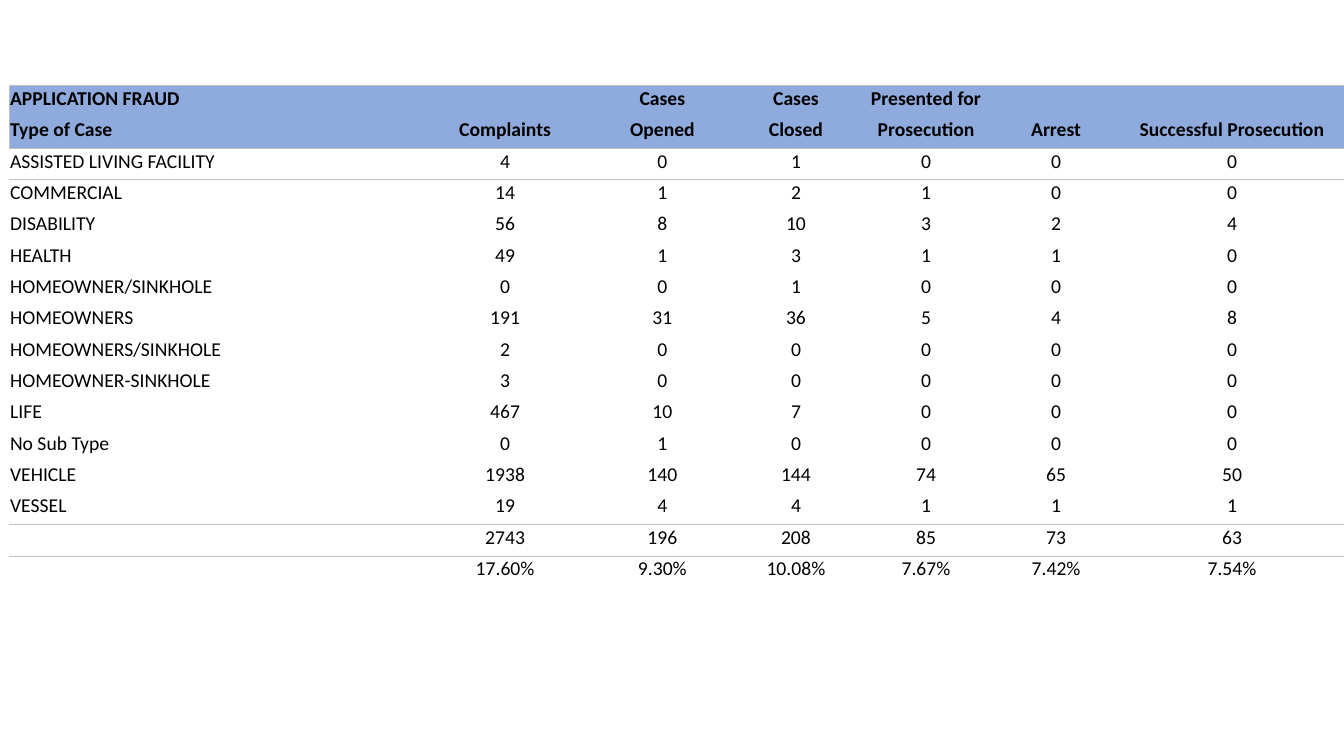
from lxml.etree import SubElement
from pptx import Presentation
from pptx.dml.color import RGBColor
from pptx.enum.text import MSO_ANCHOR as Anchor, PP_ALIGN as Align
from pptx.oxml.ns import qn
from pptx.util import Inches, Pt

HEADINGS = [
    ("APPLICATION FRAUD", "", "Cases", "Cases", "Presented for", "", ""),
    ("Type of Case", "Complaints", "Opened", "Closed", "Prosecution", "Arrest",
     "Successful Prosecution"),
]
CASES = [
    ("ASSISTED LIVING FACILITY", 4, 0, 1, 0, 0, 0),
    ("COMMERCIAL", 14, 1, 2, 1, 0, 0),
    ("DISABILITY", 56, 8, 10, 3, 2, 4),
    ("HEALTH", 49, 1, 3, 1, 1, 0),
    ("HOMEOWNER/SINKHOLE", 0, 0, 1, 0, 0, 0),
    ("HOMEOWNERS", 191, 31, 36, 5, 4, 8),
    ("HOMEOWNERS/SINKHOLE", 2, 0, 0, 0, 0, 0),
    ("HOMEOWNER-SINKHOLE", 3, 0, 0, 0, 0, 0),
    ("LIFE", 467, 10, 7, 0, 0, 0),
    ("No Sub Type", 0, 1, 0, 0, 0, 0),
    ("VEHICLE", 1938, 140, 144, 74, 65, 50),
    ("VESSEL", 19, 4, 4, 1, 1, 1),
]
TOTALS = [
    ("", 2743, 196, 208, 85, 73, 63),
    ("", "17.60%", "9.30%", "10.08%", "7.67%", "7.42%", "7.54%"),
]
ROWS = HEADINGS + CASES + TOTALS
WIDTHS = [4.06, 1.72, 1.4, 1.25, 1.33, 1.25, 2.24]
LEFT, TOP, HEIGHT = 0.09, 0.85, 4.98

BLACK = RGBColor(0, 0, 0)
BLUE = RGBColor(0x8F, 0xAA, 0xDC)
GRAY = RGBColor(0xC0, 0xC0, 0xC0)
FONT = "Calibri"
SIZE = 14
NO_STYLE = "{2D5ABB26-0587-4C30-8999-92F81FD0307C}"


def write(cell, text, bold=False, align=Align.LEFT):
    cell.margin_left = cell.margin_right = cell.margin_top = Inches(0.01)
    cell.margin_bottom = 0
    cell.vertical_anchor = Anchor.TOP
    para = cell.text_frame.paragraphs[0]
    para.alignment = align
    if not text:
        SubElement(para._p, qn("a:endParaRPr"), sz=str(SIZE * 100))
        return
    span = para.add_run()
    span.text = text
    span.font.name = FONT
    span.font.size = Pt(SIZE)
    span.font.bold = bold
    span.font.color.rgb = BLACK


def add_borders(cell, sides):
    properties = cell._tc.get_or_add_tcPr()
    for side in sides:
        line = SubElement(properties, qn(f"a:ln{side}"), w=str(Pt(0.5)))
        fill = SubElement(line, qn("a:solidFill"))
        SubElement(fill, qn("a:srgbClr"), val=str(GRAY))


def border_sides(row, column):
    header = row < len(HEADINGS)
    first_case = len(HEADINGS)
    first_total = first_case + len(CASES)
    rules = {
        "L": header and column == 0,
        "R": header and column == len(WIDTHS) - 1,
        "T": row in (0, first_case, first_total),
        "B": row in (first_case - 1, first_total - 1),
    }
    return [side for side, shown in rules.items() if shown]


def build_table(page):
    frame = page.shapes.add_table(len(ROWS), len(WIDTHS), Inches(LEFT), Inches(TOP),
                                  Inches(sum(WIDTHS)), Inches(HEIGHT))
    frame.element.xpath(".//a:tableStyleId")[0].text = NO_STYLE
    table = frame.table
    table.first_row = table.horz_banding = False
    for column, width in zip(table.columns, WIDTHS):
        column.width = Inches(width)
    for row, values in enumerate(ROWS):
        table.rows[row].height = Inches(HEIGHT / len(ROWS))
        header = row < len(HEADINGS)
        for column, value in enumerate(values):
            cell = table.cell(row, column)
            write(cell, str(value), bold=header,
                  align=Align.CENTER if column else Align.LEFT)
            add_borders(cell, border_sides(row, column))
            if header:
                cell.fill.solid()
                cell.fill.fore_color.rgb = BLUE
            else:
                cell.fill.background()


def main():
    deck = Presentation()
    deck.slide_width, deck.slide_height = Inches(13.33), Inches(7.5)
    build_table(deck.slides.add_slide(deck.slide_layouts[6]))
    deck.save("out.pptx")


if __name__ == "__main__":
    main()
